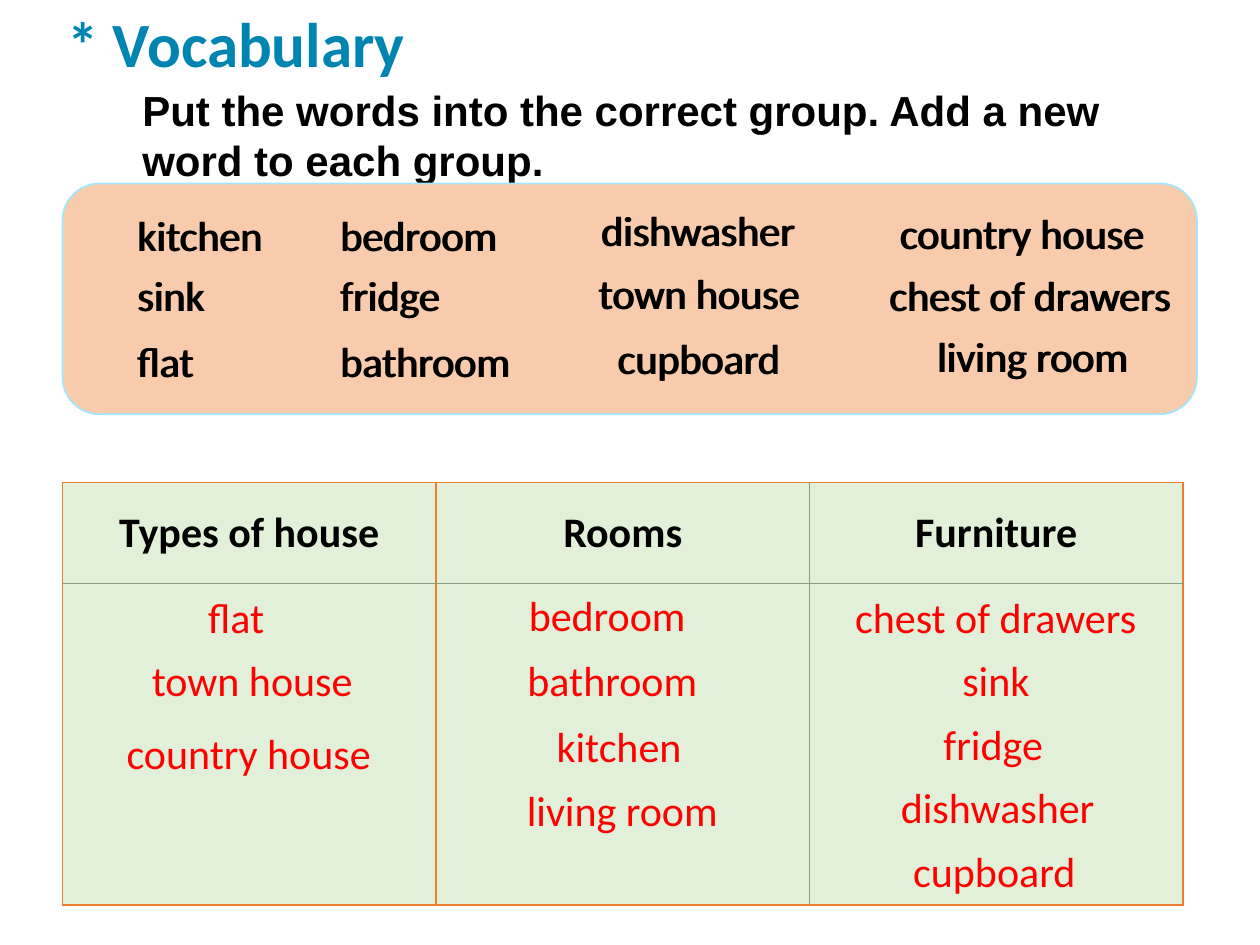
from dataclasses import dataclass

from lxml.etree import SubElement
from pptx import Presentation
from pptx.dml.color import RGBColor
from pptx.enum.shapes import MSO_SHAPE
from pptx.enum.text import MSO_ANCHOR, MSO_AUTO_SIZE, PP_ALIGN
from pptx.oxml.ns import qn
from pptx.util import Cm, Pt

BLACK = RGBColor(0x00, 0x00, 0x00)
RED = RGBColor(0xFF, 0x00, 0x00)
BLUE = RGBColor(0x00, 0x84, 0xB1)
PEACH = RGBColor(0xF8, 0xCB, 0xAD)
SKY = RGBColor(0xA3, 0xE7, 0xFF)
GREEN = RGBColor(0xE2, 0xF0, 0xD9)
ORANGE = RGBColor(0xED, 0x7D, 0x31)
GRAY = RGBColor(0x8C, 0x9A, 0x80)

LEFT, MID = PP_ALIGN.LEFT, PP_ALIGN.CENTER
HEADS = ("Types of house", "Rooms", "Furniture")
ROWS = (2.03, 6.48)
SHIFT = 0.03

# Box widths that hug each word
WIDTHS = {
    "kitchen": 3.15, "sink": 1.91, "flat": 2.34,
    "bedroom": 3.86, "fridge": 2.64, "bathroom": 4.57,
    "dishwasher": 4.55, "town house": 4.93, "cupboard": 4.55,
    "country house": 5.77, "chest of drawers": 6.22, "living room": 4.57,
}


@dataclass(frozen=True)
class Word:
    text: str
    left: float
    top: float
    align: PP_ALIGN = LEFT


BANK = (
    Word("kitchen", 2.51, 4.09),
    Word("sink", 2.51, 5.31),
    Word("flat", 2.51, 6.63),
    Word("bedroom", 6.6, 4.09),
    Word("fridge", 6.6, 5.3),
    Word("bathroom", 6.6, 6.63),
    Word("dishwasher", 11.86, 4.0),
    Word("town house", 11.81, 5.27),
    Word("cupboard", 12.19, 6.58),
    Word("country house", 17.88, 4.05),
    Word("chest of drawers", 17.67, 5.3),
    Word("living room", 18.52, 6.53, MID),
)

ANSWERS = (
    Word("flat", 3.59, 11.79, MID),
    Word("town house", 2.62, 13.06, MID),
    Word("country house", 2.13, 14.55, MID),
    Word("bedroom", 10.41, 11.76),
    Word("bathroom", 10.06, 13.06, MID),
    Word("kitchen", 10.97, 14.4),
    Word("living room", 10.26, 15.7, MID),
    Word("chest of drawers", 16.99, 11.79),
    Word("sink", 19.15, 13.06),
    Word("fridge", 18.77, 14.35),
    Word("dishwasher", 17.91, 15.62),
    Word("cupboard", 17.77, 16.92, MID),
)


def write(frame, text: str, size: int, color: RGBColor, align: PP_ALIGN,
          bold: bool = False, face: str = "Calibri") -> None:
    para = frame.paragraphs[0]
    para.alignment = align
    run = para.add_run()
    run.text = text
    font = run.font
    font.name, font.size, font.bold = face, Pt(size), bold
    font.color.rgb = color


def add_frame(slide, left: float, top: float, width: float, height: float):
    box = slide.shapes.add_textbox(Cm(left), Cm(top), Cm(width), Cm(height))
    box.text_frame.word_wrap = True
    box.text_frame.auto_size = MSO_AUTO_SIZE.SHAPE_TO_FIT_TEXT
    return box.text_frame


def add_word(slide, word: Word, color: RGBColor, shift: float = 0) -> None:
    frame = add_frame(slide, word.left + shift, word.top,
                      WIDTHS[word.text], 1.27)
    write(frame, word.text, 24, color, word.align)


def add_edge(cell, side: str, inner: bool) -> None:
    """Add one border line; sides must come in the order L, R, T, B."""
    width, color = (Pt(0.5), GRAY) if inner else (Pt(1), ORANGE)
    props = cell._tc.get_or_add_tcPr()
    line = SubElement(props, qn(f"a:ln{side}"), w=str(width))
    fill = SubElement(line, qn("a:solidFill"))
    SubElement(fill, qn("a:srgbClr"), val=str(color))


def add_table(slide) -> None:
    shape = slide.shapes.add_table(
        len(ROWS), len(HEADS), Cm(1.26), Cm(9.73), Cm(22.59), Cm(sum(ROWS)))
    table = shape.table
    table.first_row = table.horz_banding = False
    for r, height in enumerate(ROWS):
        table.rows[r].height = Cm(height)
        for c, head in enumerate(HEADS):
            table.columns[c].width = Cm(7.53)
            cell = table.cell(r, c)
            add_edge(cell, "L", c == 2)
            add_edge(cell, "R", c == 1)
            add_edge(cell, "T", r == 1)
            add_edge(cell, "B", r == 0)
            cell.fill.solid()
            cell.fill.fore_color.rgb = GREEN
            if r == 0:
                cell.vertical_anchor = MSO_ANCHOR.MIDDLE
                write(cell.text_frame, head, 24, BLACK, MID, bold=True)


def add_panel(slide) -> None:
    panel = slide.shapes.add_shape(
        MSO_SHAPE.ROUNDED_RECTANGLE, Cm(1.26), Cm(3.7), Cm(22.87), Cm(4.65))
    panel.adjustments[0] = 0.16
    panel.shadow.inherit = False
    panel.fill.solid()
    panel.fill.fore_color.rgb = PEACH
    panel.line.color.rgb = SKY
    panel.line.width = Pt(1)


def add_title(slide) -> None:
    title = slide.shapes.title
    title.left, title.top = Cm(-0.18), Cm(-0.03)
    title.width, title.height = Cm(9.88), Cm(1.8)
    frame = title.text_frame
    frame.auto_size = MSO_AUTO_SIZE.NONE
    frame.vertical_anchor = MSO_ANCHOR.TOP
    write(frame, "* Vocabulary", 36, BLUE, MID, bold=True)


def main() -> None:
    deck = Presentation()
    deck.slide_width, deck.slide_height = Cm(25.4), Cm(19.05)
    slide = deck.slides.add_slide(deck.slide_layouts[5])
    add_title(slide)
    task = add_frame(slide, 2.62, 1.57, 21.82, 2.31)
    write(task, "Put the words into the correct group. "
          "Add a new word to each group.", 24, BLACK, LEFT, True, "Arial")
    add_table(slide)
    add_panel(slide)
    # Each bank word is a stacked pair, one to stay and one to move
    for shift in (0, SHIFT):
        for word in BANK:
            add_word(slide, word, BLACK, shift)
    for word in ANSWERS:
        add_word(slide, word, RED)
    deck.save("out.pptx")


if __name__ == "__main__":
    main()
